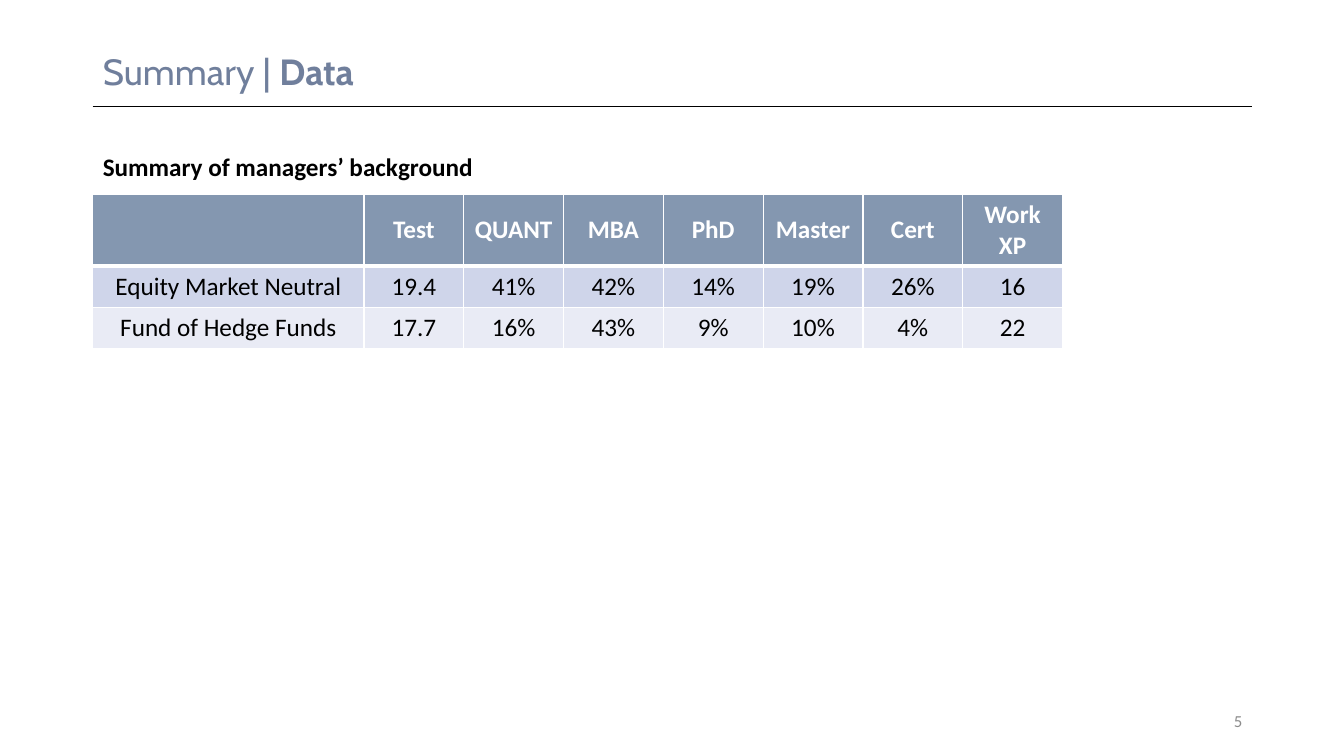
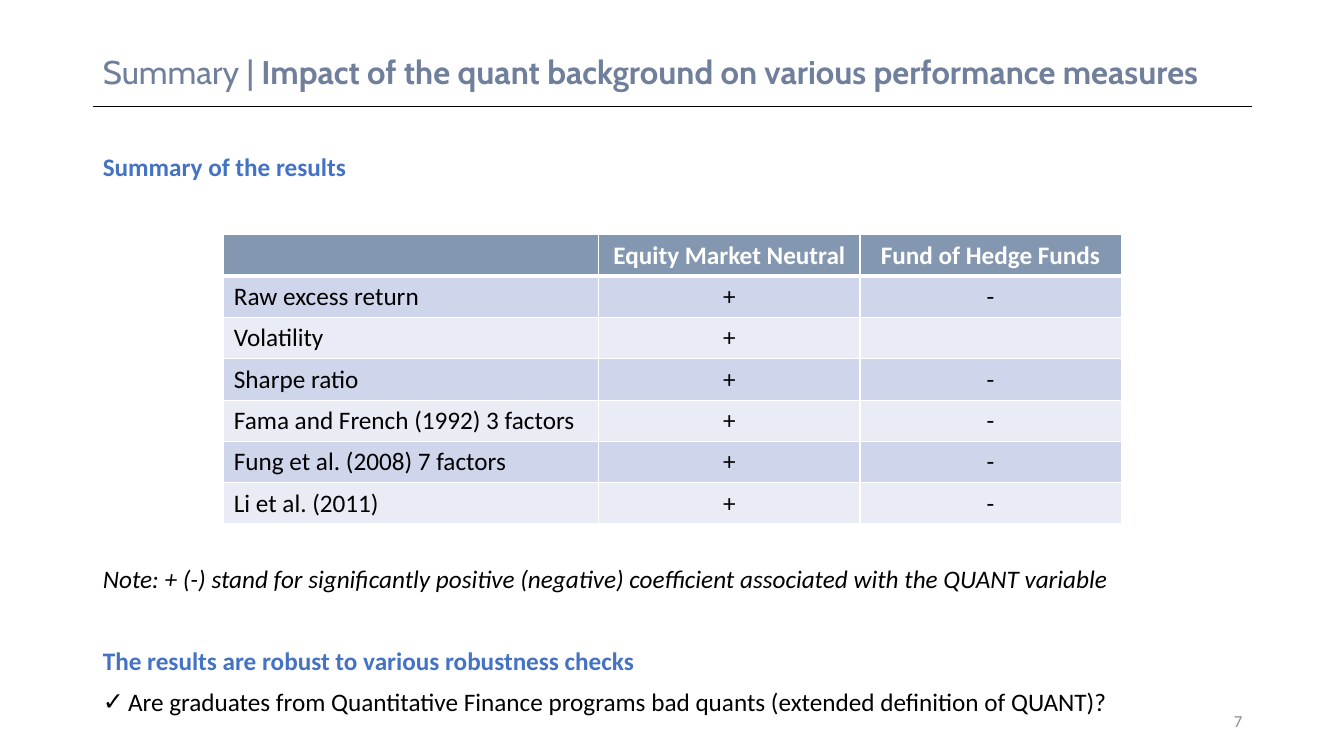
from dataclasses import dataclass
from typing import Any

from lxml.etree import SubElement
from pptx import Presentation
from pptx.dml.color import RGBColor
from pptx.enum.text import MSO_ANCHOR, MSO_AUTO_SIZE, PP_ALIGN
from pptx.oxml import parse_xml
from pptx.oxml.ns import nsdecls, qn
from pptx.util import Inches, Pt

BLACK = RGBColor(0x00, 0x00, 0x00)
WHITE = RGBColor(0xFF, 0xFF, 0xFF)
SLATE = RGBColor(0x70, 0x7F, 0x9C)
BLUE = RGBColor(0x44, 0x72, 0xC4)
GREY = RGBColor(0x8C, 0x8C, 0x8C)
HEADER_FILL = RGBColor(0x84, 0x97, 0xB0)
BAND_FILLS = (RGBColor(0xCF, 0xD5, 0xEA), RGBColor(0xE9, 0xEB, 0xF5))

LEFT, CONTENT_WIDTH = 0.92, 11.5
RULE_TOP = 1.06
ROW_HEIGHT = 0.41
LINE_SPACING = 0.9

# Text formats
TITLE = {"name": "Cabin", "color": SLATE, "bold": False}
BODY = {"name": "Calibri", "size": Pt(18), "color": BLACK, "bold": False}
STRONG = BODY | {"bold": True}
HEADING = STRONG | {"color": BLUE}
NOTE = BODY | {"italic": True}
TABLE_HEADER = STRONG | {"color": WHITE}
PAGE_NUMBER = BODY | {"size": Pt(12), "color": GREY}


@dataclass(frozen=True)
class BodyLine:
    text: str
    formats: dict[str, Any]
    space_before: float = 0
    bullet: str = ""


@dataclass(frozen=True)
class TableData:
    left: float
    top: float
    column_widths: list[float]
    header_height: float
    label_alignment: PP_ALIGN
    rows: list[list[str]]


@dataclass(frozen=True)
class SlideData:
    subject: str
    title_size: float
    page: int
    body_height: float
    lines: list[BodyLine]
    table: TableData


SLIDES = [
    SlideData(
        "Data", 26, 5, 5.1,
        [BodyLine("Summary of managers’ background", STRONG)],
        TableData(
            LEFT, 1.93, [2.69] + [0.99] * 7, 0.7, PP_ALIGN.CENTER,
            [
                ["", "Test", "QUANT", "MBA", "PhD", "Master", "Cert", "Work XP"],
                ["Equity Market Neutral", "19.4", "41%", "42%", "14%", "19%", "26%", "16"],
                ["Fund of Hedge Funds", "17.7", "16%", "43%", "9%", "10%", "4%", "22"],
            ],
        ),
    ),
    SlideData(
        "Impact of the quant background on various performance measures", 23.4, 7, 5.72,
        [
            BodyLine("Summary of the results", HEADING),
            BodyLine(
                "Note: + (-) stand for significantly positive (negative) coefficient "
                "associated with the QUANT variable", NOTE, 275),
            BodyLine("The results are robust to various robustness checks", HEADING, 39.5),
            BodyLine(
                "Are graduates from Quantitative Finance programs bad quants "
                "(extended definition of QUANT)?", BODY, 10, "✓"),
        ],
        TableData(
            2.22, 2.33, [3.72, 2.59, 2.59], ROW_HEIGHT, PP_ALIGN.LEFT,
            [
                ["", "Equity Market Neutral", "Fund of Hedge Funds"],
                ["Raw excess return", "+", "-"],
                ["Volatility", "+", ""],
                ["Sharpe ratio", "+", "-"],
                ["Fama and French (1992) 3 factors", "+", "-"],
                ["Fung et al. (2008) 7 factors", "+", "-"],
                ["Li et al. (2011)", "+", "-"],
            ],
        ),
    ),
]


def add_run(paragraph, text: str, formats: dict[str, Any]) -> None:
    run = paragraph.add_run()
    run.text = text
    for attribute, value in formats.items():
        if attribute == "color":
            run.font.color.rgb = value
        else:
            setattr(run.font, attribute, value)


def place(shape, left: float, top: float, width: float, height: float) -> None:
    bounds = {"left": left, "top": top, "width": width, "height": height}
    for attribute, value in bounds.items():
        setattr(shape, attribute, Inches(value))


def prepare_frame(frame, anchor: MSO_ANCHOR) -> None:
    settings = {"word_wrap": True, "auto_size": MSO_AUTO_SIZE.NONE, "vertical_anchor": anchor}
    for attribute, value in settings.items():
        setattr(frame, attribute, value)


def set_bullet(paragraph, bullet: str) -> None:
    properties = paragraph._p.get_or_add_pPr()
    indent = Inches(0.25) if bullet else 0
    properties.set("marL", str(indent))
    properties.set("indent", str(-indent))
    if bullet:
        SubElement(properties, qn("a:buChar"), char=bullet)
    else:
        SubElement(properties, qn("a:buNone"))


def add_title(slide, subject: str, size: float) -> None:
    title = slide.shapes.title
    place(title, LEFT, 0.4, CONTENT_WIDTH, 0.66)
    prepare_frame(title.text_frame, MSO_ANCHOR.MIDDLE)
    paragraph = title.text_frame.paragraphs[0]
    paragraph.alignment = PP_ALIGN.LEFT
    paragraph.line_spacing = LINE_SPACING
    formats = TITLE | {"size": Pt(size)}
    add_run(paragraph, "Summary | ", formats)
    add_run(paragraph, subject, formats | {"bold": True})


def add_body(slide, lines: list[BodyLine], height: float) -> None:
    body = slide.placeholders[1]
    place(body, LEFT, 1.48, CONTENT_WIDTH, height)
    frame = body.text_frame
    prepare_frame(frame, MSO_ANCHOR.TOP)
    for index, line in enumerate(lines):
        paragraph = frame.add_paragraph() if index else frame.paragraphs[0]
        paragraph.line_spacing = LINE_SPACING
        paragraph.space_before = Pt(line.space_before)
        set_bullet(paragraph, line.bullet)
        add_run(paragraph, line.text, line.formats)


def add_title_rule(slide) -> None:
    rule = slide.shapes.add_connector(
        1, Inches(LEFT), Inches(RULE_TOP), Inches(LEFT + CONTENT_WIDTH), Inches(RULE_TOP))
    rule.line.color.rgb = BLACK
    rule.line.width = Pt(0.5)
    SubElement(rule._element.spPr, qn("a:effectLst"))


def add_page_number(slide, page: int) -> None:
    box = slide.shapes.add_textbox(Inches(9.42), Inches(6.95), Inches(3), Inches(0.4))
    prepare_frame(box.text_frame, MSO_ANCHOR.MIDDLE)
    paragraph = box.text_frame.paragraphs[0]
    paragraph.alignment = PP_ALIGN.RIGHT
    add_run(paragraph, str(page), PAGE_NUMBER)


def set_borders(cell, top: float, bottom: float) -> None:
    properties = cell._tc.get_or_add_tcPr()
    widths = {"lnL": 1, "lnR": 1, "lnT": top, "lnB": bottom}
    for index, (side, width) in enumerate(widths.items()):
        border = parse_xml(
            f'<a:{side} {nsdecls("a")} w="{Pt(width)}"><a:solidFill>'
            f'<a:srgbClr val="{WHITE}"/></a:solidFill></a:{side}>')
        properties.insert(index, border)


def add_data_table(slide, data: TableData) -> None:
    row_count = len(data.rows)
    height = data.header_height + ROW_HEIGHT * (row_count - 1)
    table = slide.shapes.add_table(
        row_count, len(data.column_widths), Inches(data.left), Inches(data.top),
        Inches(sum(data.column_widths)), Inches(height)).table
    for column, width in zip(table.columns, data.column_widths):
        column.width = Inches(width)

    for row_index, texts in enumerate(data.rows):
        is_header = row_index == 0
        table.rows[row_index].height = Inches(data.header_height if is_header else ROW_HEIGHT)
        for column_index, text in enumerate(texts):
            cell = table.cell(row_index, column_index)
            cell.vertical_anchor = MSO_ANCHOR.MIDDLE
            cell.fill.solid()
            cell.fill.fore_color.rgb = HEADER_FILL if is_header else BAND_FILLS[(row_index - 1) % 2]
            # A heavier rule separates the header from the first data row
            set_borders(cell, top=3 if row_index == 1 else 1, bottom=3 if is_header else 1)
            paragraph = cell.text_frame.paragraphs[0]
            paragraph.alignment = PP_ALIGN.CENTER if column_index else data.label_alignment
            if text:
                add_run(paragraph, text, TABLE_HEADER if is_header else BODY)


def main() -> None:
    presentation = Presentation()
    presentation.slide_width = Inches(13.33)
    presentation.slide_height = Inches(7.5)
    for data in SLIDES:
        slide = presentation.slides.add_slide(presentation.slide_layouts[1])
        add_title(slide, data.subject, data.title_size)
        add_body(slide, data.lines, data.body_height)
        add_title_rule(slide)
        add_page_number(slide, data.page)
        add_data_table(slide, data.table)
    presentation.save("out.pptx")


if __name__ == "__main__":
    main()
